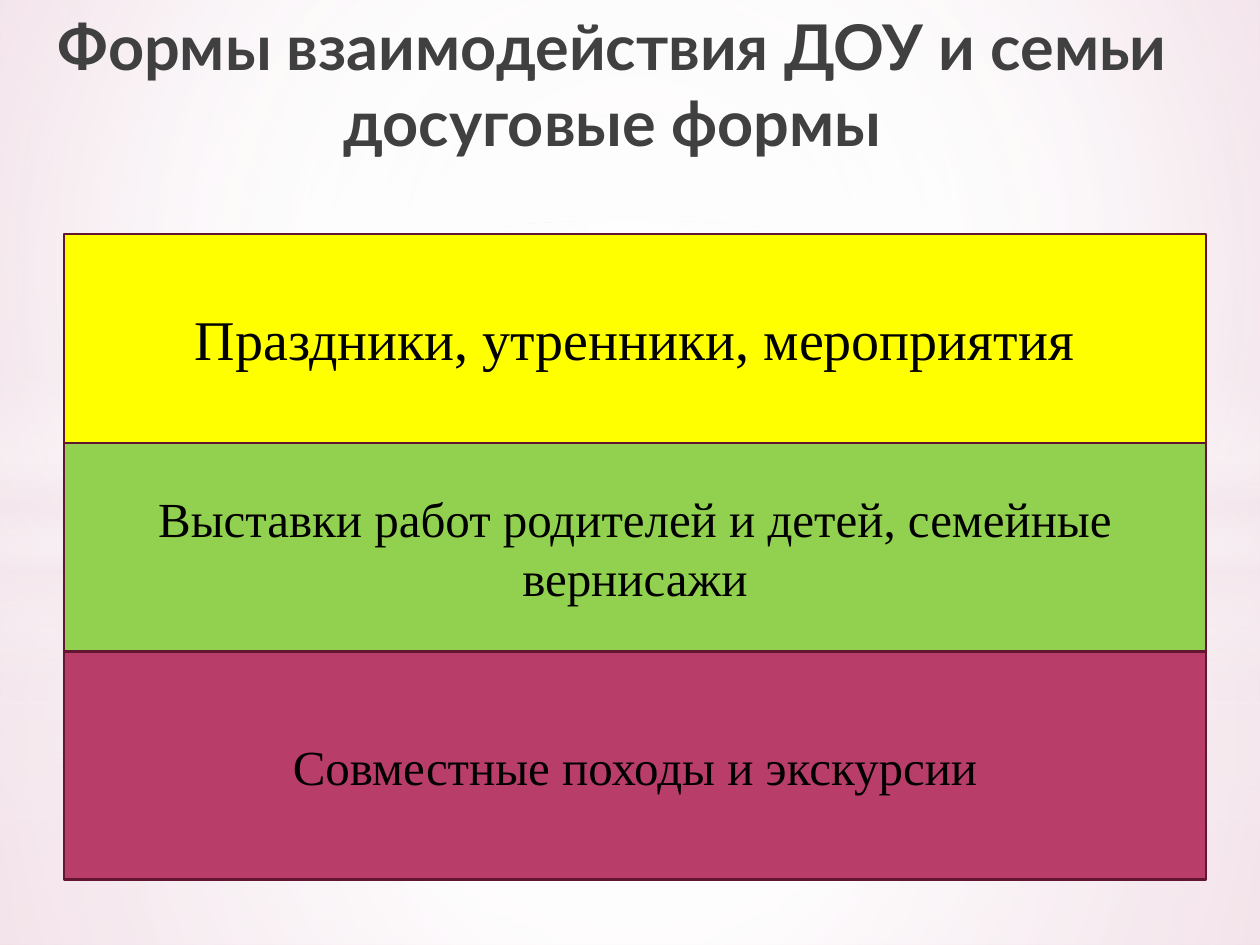
from dataclasses import dataclass

from lxml.etree import SubElement
from pptx import Presentation
from pptx.dml.color import RGBColor
from pptx.enum.shapes import MSO_SHAPE as Preset
from pptx.enum.text import MSO_ANCHOR as Anchor, PP_ALIGN as Align
from pptx.oxml.ns import qn
from pptx.util import Inches, Pt


@dataclass(frozen=True)
class Theme:
    white: str = "FFFFFF"
    blush: str = "F4E7ED"
    rose: str = "E09DBC"
    pale_rose: str = "EDDAE2"
    yellow: str = "FFFF00"
    green: str = "92D050"
    crimson: str = "B83D68"
    border: str = "621631"
    title_ink: str = "404040"
    body_ink: str = "000000"
    title_font: str = "Lato"
    body_font: str = "Times New Roman"
    title_size: int = 36
    large_size: int = 32
    body_size: int = 28
    border_width: float = 1.25


@dataclass(frozen=True)
class Box:
    """Left, top, width and height in percent of the slide."""
    left: float
    top: float
    width: float
    height: float


@dataclass(frozen=True)
class Stop:
    position: int
    color: str
    opacity: int = 100


@dataclass(frozen=True)
class Glow:
    """One set of backdrop layers: two panels, a band and an ellipse."""
    split: float
    band_top: float
    lower: tuple[int, int, int]
    upper: tuple[int, int, int]
    ellipse_end: int


@dataclass(frozen=True)
class Band:
    text: str
    color: str
    size: int
    height: float


THEME = Theme()
CENTER = (50, 50, 50, 50)
TITLE_BOX = Box(0, 2.8, 97.2, 14.67)
BANDS_LEFT, BANDS_TOP, BANDS_WIDTH = 5.1, 24.8, 90.6

GLOWS = (
    Glow(74.4, 54.93, (91, 76, 79), (89, 62, 79), 56),
    Glow(56.4, 38.67, (92, 77, 80), (90, 63, 80), 54),
)
BANDS = (
    Band("Праздники, утренники, мероприятия", THEME.yellow, THEME.large_size, 22.07),
    Band("Выставки работ родителей и детей, семейные вернисажи",
         THEME.green, THEME.body_size, 22.07),
    Band("Совместные походы и экскурсии", THEME.crimson, THEME.body_size, 24.13),
)

presentation = Presentation()
presentation.slide_width, presentation.slide_height = Inches(10), Inches(7.5)
slide = presentation.slides.add_slide(presentation.slide_layouts[5])


def place(box: Box) -> tuple[int, int, int, int]:
    width, height = presentation.slide_width, presentation.slide_height
    return (int(width * box.left / 100), int(height * box.top / 100),
            int(width * box.width / 100), int(height * box.height / 100))


def set_gradient(fill, owner, stops: list[Stop], focus=None) -> None:
    """Circular gradient around focus, or a vertical one without it."""
    fill.solid()
    solid = owner.find(qn("a:solidFill"))
    gradient = owner.makeelement(qn("a:gradFill"), {"rotWithShape": "1"})
    owner.replace(solid, gradient)
    stop_list = SubElement(gradient, qn("a:gsLst"))
    for stop in stops:
        entry = SubElement(stop_list, qn("a:gs"), pos=str(stop.position * 1000))
        color = SubElement(entry, qn("a:srgbClr"), val=stop.color)
        if stop.opacity < 100:
            SubElement(color, qn("a:alpha"), val=str(stop.opacity * 1000))
    if focus is None:
        SubElement(gradient, qn("a:lin"), ang="5400000", scaled="0")
    else:
        circle = SubElement(gradient, qn("a:path"), {"path": "circle"})
        sides = {side: str(share * 1000) for side, share in zip("ltrb", focus)}
        SubElement(circle, qn("a:fillToRect"), sides)


def add_plain(preset: Preset, box: Box):
    shape = slide.shapes.add_shape(preset, *place(box))
    shape.shadow.inherit = False
    return shape


def add_layer(preset: Preset, box: Box, stops: list[Stop], focus=None) -> None:
    shape = add_plain(preset, box)
    shape.line.fill.background()
    set_gradient(shape.fill, shape.element.spPr, stops, focus)


def panel_stops(middle: int, opacities: tuple[int, int, int]) -> list[Stop]:
    colors = (THEME.white, THEME.white, THEME.blush)
    return [Stop(*values) for values in zip((0, middle, 100), colors, opacities)]


def add_glow(glow: Glow) -> None:
    add_layer(Preset.RECTANGLE, Box(0, glow.split, 100, 100 - glow.split),
              panel_stops(37, glow.lower), CENTER)
    add_layer(Preset.RECTANGLE, Box(0, 0, 100, glow.split),
              panel_stops(48, glow.upper), CENTER)
    add_layer(Preset.RECTANGLE, Box(0, glow.band_top, 100, 33.33), [
        Stop(0, THEME.white, 0), Stop(29, THEME.white, 30),
        Stop(45, THEME.blush, 40), Stop(55, THEME.white, 26),
        Stop(65, THEME.blush, 60), Stop(100, THEME.white, 0)])
    add_layer(Preset.OVAL, Box(0, 23.33, 100, 74.4),
              [Stop(0, THEME.white), Stop(glow.ellipse_end, THEME.white, 0)], CENTER)


def set_text(shape, text: str, font_name: str, size: int, color: str,
             anchor: Anchor, bold: bool = False) -> None:
    frame = shape.text_frame
    frame.text = text
    frame.word_wrap = True
    frame.vertical_anchor = anchor
    paragraph = frame.paragraphs[0]
    paragraph.alignment = Align.CENTER
    for run in paragraph.runs:
        run.font.name, run.font.size, run.font.bold = font_name, Pt(size), bold
        run.font.color.rgb = RGBColor.from_string(color)


def add_band(band: Band, top: float) -> None:
    shape = add_plain(Preset.RECTANGLE, Box(BANDS_LEFT, top, BANDS_WIDTH, band.height))
    shape.fill.solid()
    shape.fill.fore_color.rgb = RGBColor.from_string(band.color)
    shape.line.color.rgb = RGBColor.from_string(THEME.border)
    shape.line.width = Pt(THEME.border_width)
    set_text(shape, band.text, THEME.body_font, band.size, THEME.body_ink, Anchor.MIDDLE)


# Background and backdrop layers
background_fill = slide.background.fill
background_fill.solid()
set_gradient(background_fill, slide.element.find(".//" + qn("p:bgPr")),
             [Stop(0, THEME.pale_rose), Stop(60, THEME.white), Stop(100, THEME.rose)],
             (20, 10, 20, 60))
for glow in GLOWS:
    add_glow(glow)

# Title, brought in front of the backdrop
title = slide.shapes.title
title.left, title.top, title.width, title.height = place(TITLE_BOX)
set_text(title, "Формы взаимодействия ДОУ и семьи\vдосуговые формы",
         THEME.title_font, THEME.title_size, THEME.title_ink, Anchor.BOTTOM, bold=True)
title.element.getparent().append(title.element)

# Stacked bands
band_top = BANDS_TOP
for band in BANDS:
    add_band(band, band_top)
    band_top += band.height

presentation.save("out.pptx")
